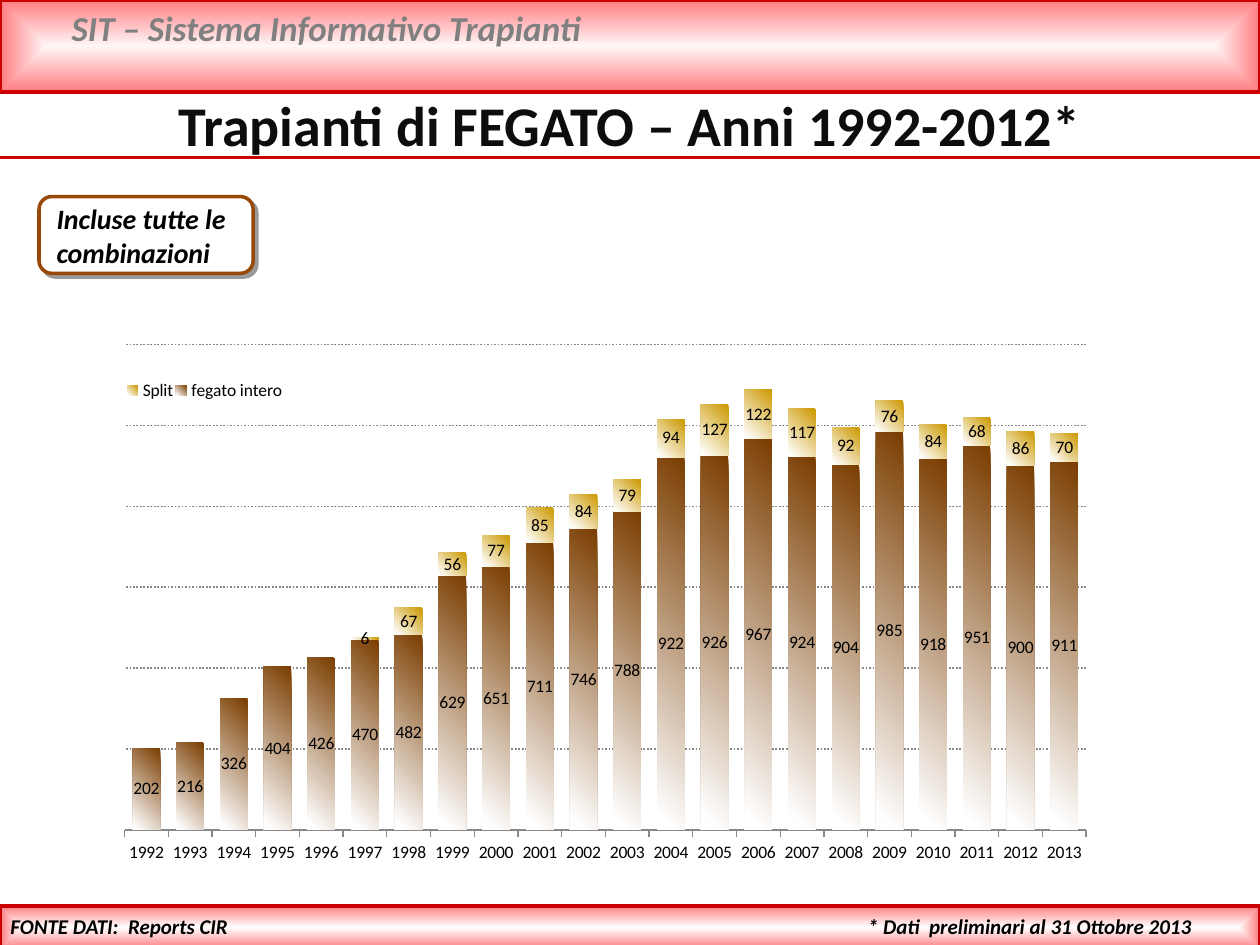
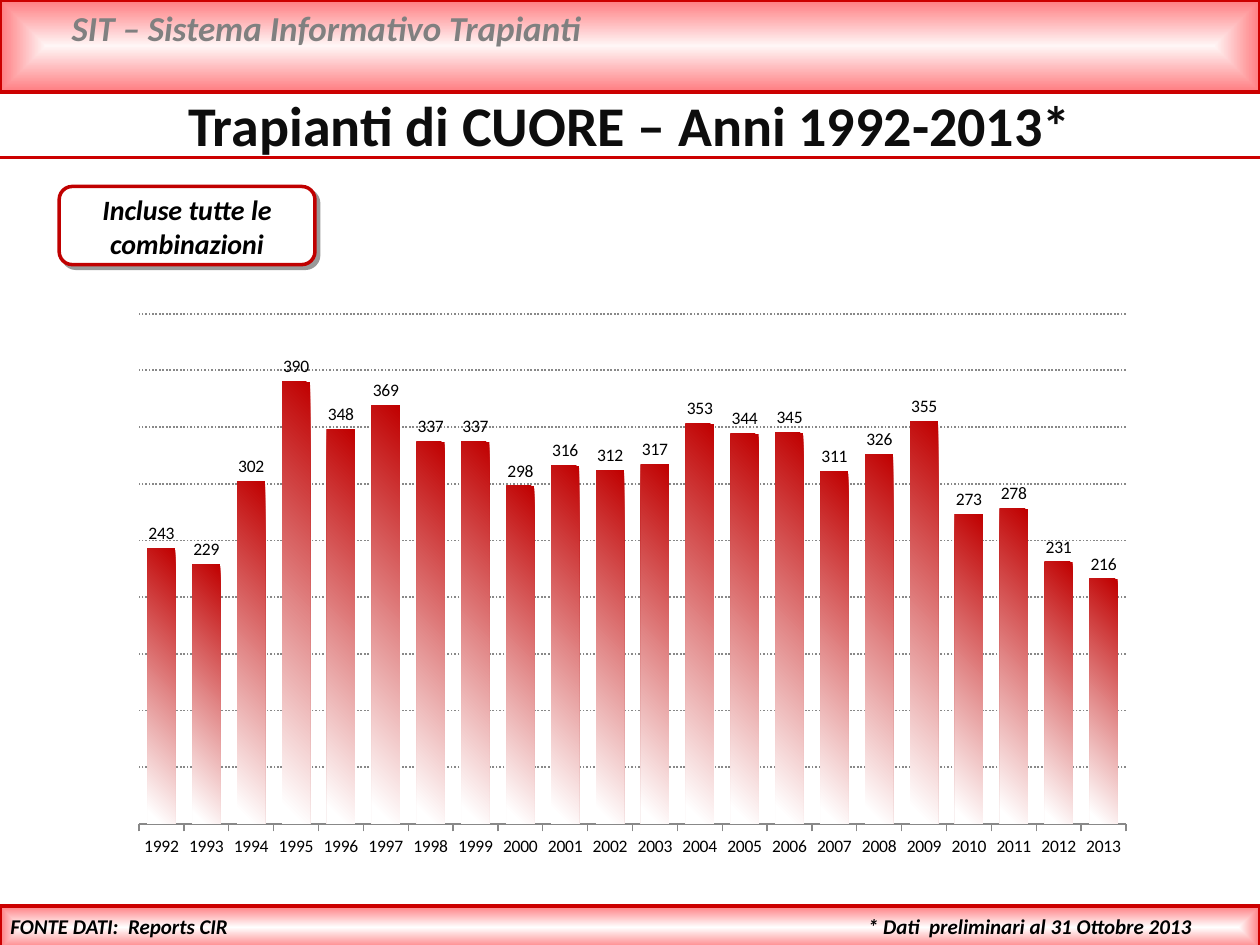
from dataclasses import dataclass

import lxml.etree
import pptx
import pptx.chart.data
import pptx.dml.color
import pptx.enum.chart
import pptx.enum.dml
import pptx.enum.shapes
import pptx.enum.text
import pptx.oxml
import pptx.oxml.ns
import pptx.util

Inches, Pt = pptx.util.Inches, pptx.util.Pt
CHART = pptx.enum.chart
ALIGN = pptx.enum.text.PP_ALIGN
SHAPE = pptx.enum.shapes.MSO_SHAPE
qn = pptx.oxml.ns.qn


@dataclass(frozen=True)
class Theme:
    font: str = "Calibri"
    black: str = "000000"
    title: str = "0D0D0D"
    header: str = "808080"
    white: str = "FFFFFF"
    header_light: str = "FFF6F6"
    pink: str = "FF7C80"
    red: str = "CC0000"
    heart: str = "C00000"
    liver: str = "7A3D00"
    liver_border: str = "984807"
    split: str = "CC9900"
    grid: str = "888888"
    title_size: int = 32
    header_size: int = 20
    note_size: int = 16
    footer_size: int = 12
    chart_size: int = 10
    line_width: int = 2


THEME = Theme()
YEARS = [str(year) for year in range(1992, 2014)]
WHOLE_LIVER = [202, 216, 326, 404, 426, 470, 482, 629, 651, 711, 746,
               788, 922, 926, 967, 924, 904, 985, 918, 951, 900, 911]
SPLIT_LIVER = [None] * 5 + [6, 67, 56, 77, 85, 84, 79, 94, 127, 122, 117,
                            92, 76, 84, 68, 86, 70]
HEART = [243, 229, 302, 390, 348, 369, 337, 337, 298, 316, 312,
         317, 353, 344, 345, 311, 326, 355, 273, 278, 231, 216]


def rgb(color):
    return pptx.dml.color.RGBColor.from_string(color)


def inches(box):
    return [Inches(value) for value in box]


def set_attributes(target, values):
    for name, value in values.items():
        setattr(target, name, value)


def set_font(font, size, color, **style):
    set_attributes(font, {"name": THEME.font, "size": Pt(size), **style})
    font.color.rgb = rgb(color)


def set_line(line, color, width=THEME.line_width):
    line.color.rgb = rgb(color)
    line.width = Pt(width)


def set_gradient(fill, start, end, end_position=1.0):
    fill.gradient()
    for stop, color, position in zip(fill.gradient_stops, (start, end),
                                     (0, end_position)):
        stop.color.rgb = rgb(color)
        stop.position = position


def write_text(sp, text, size, color, align=ALIGN.LEFT, wrap=True, **style):
    tf = sp.text_frame
    set_attributes(tf, {"word_wrap": wrap,
                        "auto_size": pptx.enum.text.MSO_AUTO_SIZE.NONE,
                        "vertical_anchor": pptx.enum.text.MSO_ANCHOR.TOP})
    p = tf.paragraphs[0]
    p.alignment = align
    r = p.add_run()
    r.text = text
    set_font(r.font, size, color, bold=True, **style)


def add_text(slide, box, *args, **style):
    write_text(slide.shapes.add_textbox(*inches(box)), *args, **style)


def add_band(slide, box, center_color):
    """Add a bar whose gradient runs from its centre to its four edges."""
    sp = slide.shapes.add_shape(SHAPE.RECTANGLE, *inches(box))
    sp.shadow.inherit = False
    set_line(sp.line, THEME.red)
    set_gradient(sp.fill, center_color, THEME.pink)
    gradient = sp._element.spPr.find(qn("a:gradFill"))
    gradient.remove(gradient.find(qn("a:lin")))
    path = lxml.etree.SubElement(gradient, qn("a:path"), {"path": "shape"})
    lxml.etree.SubElement(path, qn("a:fillToRect"),
                          dict.fromkeys("ltrb", "50000"))


def add_rule(slide, y):
    rule = slide.shapes.add_connector(
        pptx.enum.shapes.MSO_CONNECTOR.STRAIGHT, *inches((0, y, 10, y)))
    set_line(rule.line, THEME.red)
    lxml.etree.SubElement(rule._element.spPr, qn("a:effectLst"))


def add_note(slide, box, text_box, border, align):
    """Add a rounded frame with a hard shadow and the note over it."""
    sp = slide.shapes.add_shape(SHAPE.ROUNDED_RECTANGLE, *inches(box))
    sp.fill.solid()
    sp.fill.fore_color.rgb = rgb(THEME.white)
    set_line(sp.line, border)
    sp._element.spPr.append(pptx.oxml.parse_xml(
        f'<a:effectLst {pptx.oxml.ns.nsdecls("a")}>'
        f'<a:outerShdw dist="{Pt(3)}" dir="2700000" algn="tl" rotWithShape="0">'
        f'<a:srgbClr val="{THEME.black}"><a:alpha val="40000"/></a:srgbClr>'
        '</a:outerShdw></a:effectLst>'))
    add_text(slide, text_box, "Incluse tutte le combinazioni",
             THEME.note_size, THEME.black, align, italic=True)


def add_base_slide(prs, title):
    """Add a slide with its title, bands, rule and footer texts."""
    slide = prs.slides.add_slide(prs.slide_layouts[5])
    footer = {"size": THEME.footer_size, "color": THEME.black, "italic": True}
    add_band(slide, (0, 0, 10, 0.73), THEME.header_light)
    add_text(slide, (0.47, 0, 8.98, 0.44), "SIT – Sistema Informativo Trapianti",
             THEME.header_size, THEME.header, italic=True)
    add_band(slide, (0, 7.19, 10, 0.34), THEME.white)
    add_rule(slide, 1.25)
    add_text(slide, (6.79, 7.2, 3.21, 0.3),
             "* Dati  preliminari al 31 Ottobre 2013", **footer)
    add_text(slide, (-0.04, 7.2, 1.95, 0.3), "FONTE DATI:  Reports CIR",
             align=ALIGN.RIGHT, wrap=False, **footer)
    sp = slide.shapes.title
    set_attributes(sp, dict(zip(("left", "top", "width", "height"),
                                inches((0, 0.67, 10, 0.64)))))
    write_text(sp, title, THEME.title_size, THEME.title, ALIGN.CENTER)
    return slide


def set_layout(parent, index, x, y, w, h, target=""):
    """Place a chart part by fractions of the chart's size."""
    for old in parent.findall(qn("c:layout")):
        parent.remove(old)
    layout = lxml.etree.Element(qn("c:layout"))
    manual = lxml.etree.SubElement(layout, qn("c:manualLayout"))
    values = {"layoutTarget": target, "xMode": "edge", "yMode": "edge",
              "x": x, "y": y, "w": w, "h": h}
    for name, value in values.items():
        if value != "":
            lxml.etree.SubElement(manual, qn(f"c:{name}"), {"val": str(value)})
    parent.insert(index, layout)


def style_axes(chart, maximum, step):
    set_attributes(chart.value_axis, {
        "minimum_scale": 0, "maximum_scale": maximum, "major_unit": step,
        "has_major_gridlines": True, "visible": False})
    grid = chart.value_axis.major_gridlines.format.line
    set_line(grid, THEME.grid, 1)
    grid.dash_style = pptx.enum.dml.MSO_LINE.ROUND_DOT
    set_attributes(chart.category_axis, {
        "major_tick_mark": CHART.XL_TICK_MARK.OUTSIDE,
        "minor_tick_mark": CHART.XL_TICK_MARK.NONE})
    set_line(chart.category_axis.format.line, THEME.grid, 0.75)


def add_year_chart(slide, box, kind, series, maximum, step, overlap, labels):
    """Add a column chart by year; series holds (name, values, colour)."""
    data = pptx.chart.data.CategoryChartData()
    data.categories = YEARS
    for name, values, _ in series:
        data.add_series(name, values)
    chart = slide.shapes.add_chart(kind, *inches(box), data).chart
    set_attributes(chart, {"has_title": False, "has_legend": False})
    set_font(chart.font, THEME.chart_size, THEME.black)
    style_axes(chart, maximum, step)
    plot = chart.plots[0]
    set_attributes(plot, {"gap_width": 60, "overlap": overlap,
                          "vary_by_categories": False,
                          "has_data_labels": True})
    set_attributes(plot.data_labels, {"show_value": True, "position": labels})
    for item, (_, _, color) in zip(plot.series, series):
        fill = item.format.fill
        set_gradient(fill, color, THEME.white, 0.96)
        fill.gradient_angle = 225
    plot_area = chart._chartSpace.chart.plotArea
    set_layout(plot_area, 0, 0.02, 0.02, 0.96, 0.9, "inner")
    return chart


def add_legend(chart):
    chart.has_legend = True
    set_attributes(chart.legend, {
        "position": CHART.XL_LEGEND_POSITION.LEFT, "include_in_layout": True})
    set_font(chart.legend.font, THEME.chart_size, THEME.black)
    set_layout(chart.legend._element, 1, 0.02, 0.04, 0.16, 0.13)


def add_liver_slide(prs):
    slide = add_base_slide(prs, "Trapianti di FEGATO – Anni 1992-2012*")
    add_note(slide, (0.31, 1.56, 1.7, 0.61), (0.35, 1.55, 1.65, 0.64),
             THEME.liver_border, ALIGN.LEFT)
    chart = add_year_chart(
        slide, (0.83, 2.65, 7.95, 4.28), CHART.XL_CHART_TYPE.COLUMN_STACKED,
        [("fegato intero", WHOLE_LIVER, THEME.liver),
         ("Split", SPLIT_LIVER, THEME.split)],
        maximum=1200, step=200, overlap=100,
        labels=CHART.XL_LABEL_POSITION.CENTER)
    add_legend(chart)


def add_heart_slide(prs):
    slide = add_base_slide(prs, "Trapianti di CUORE – Anni 1992-2013*")
    add_note(slide, (0.47, 1.48, 2.03, 0.62), (0.47, 1.48, 2.03, 0.64),
             THEME.heart, ALIGN.CENTER)
    add_year_chart(
        slide, (0.94, 2.4, 8.16, 4.5), CHART.XL_CHART_TYPE.COLUMN_CLUSTERED,
        [("Series 1", HEART, THEME.heart)],
        maximum=450, step=50, overlap=-20,
        labels=CHART.XL_LABEL_POSITION.OUTSIDE_END)


def main():
    prs = pptx.Presentation()
    set_attributes(prs, {"slide_width": Inches(10), "slide_height": Inches(7.5)})
    add_liver_slide(prs)
    add_heart_slide(prs)
    prs.save("out.pptx")


if __name__ == "__main__":
    main()
